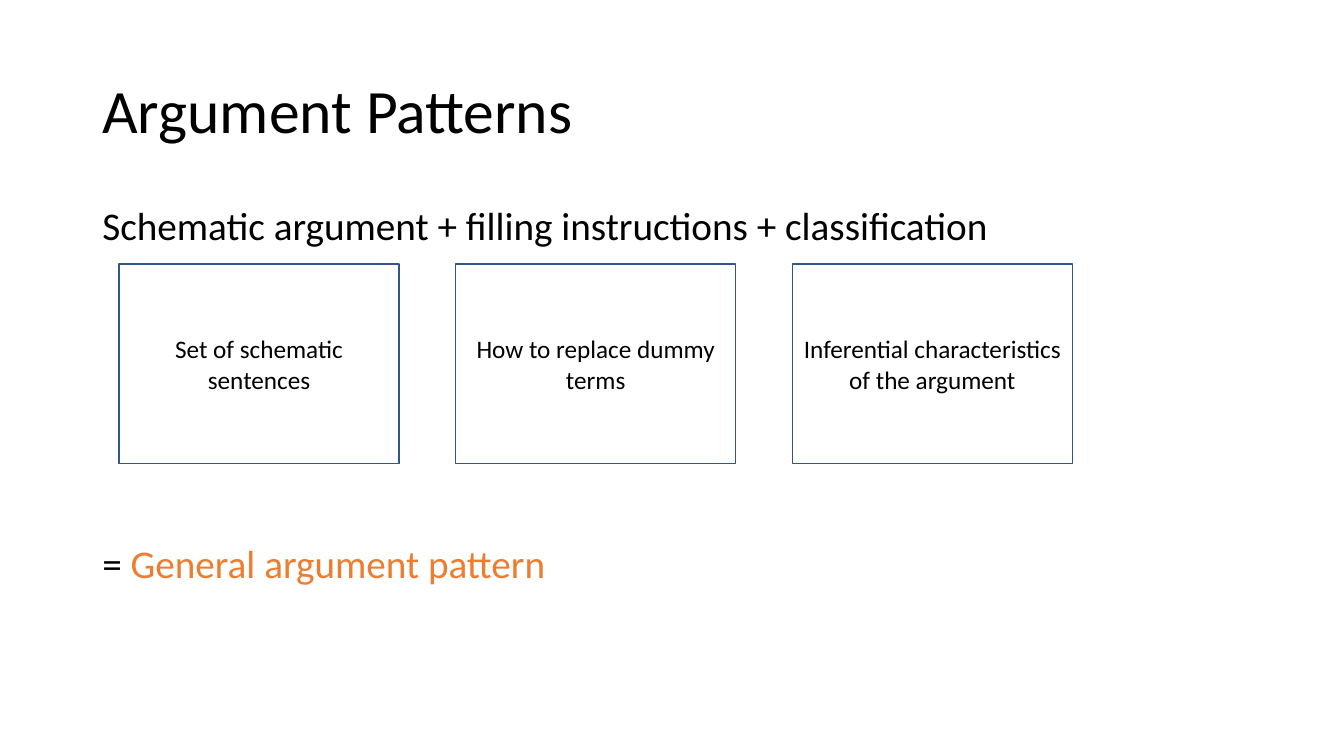
"""Build the Argument Patterns slide."""
from pptx import Presentation
from pptx.dml.color import RGBColor
from pptx.enum import shapes, text
from pptx.util import Pt

COLORS = {"text": "000000", "accent": "ED7D31", "border": "325491"}
FONT = "Calibri"
TITLE = "Argument Patterns"
FORMULA = "Schematic argument + filling instructions + classification"
RESULT = [("= ", "text"), ("General argument pattern", "accent")]
PARTS = [
    "Set of schematic sentences",
    "How to replace dummy terms",
    "Inferential characteristics of the argument",
]
LEFT, WIDTH = 66, 828
BOX_LEFT, BOX_TOP, BOX_W, BOX_H, BOX_STEP = 84.96, 188.64, 200.16, 142.56, 240.48


def write(p, runs, size=28, align=text.PP_ALIGN.LEFT, line=0.9, before=0):
    p.alignment = align
    p.line_spacing = line
    p.space_before = Pt(before)
    for words, color in runs:
        r = p.add_run()
        r.text = words
        r.font.name = FONT
        r.font.size = Pt(size)
        r.font.color.rgb = RGBColor.from_string(COLORS[color])


def frame(sp, anchor):
    tf = sp.text_frame
    tf.word_wrap = True
    tf.vertical_anchor = anchor
    return tf


def main():
    prs = Presentation()
    prs.slide_width, prs.slide_height = Pt(960), Pt(540)
    s = prs.slides.add_slide(prs.slide_layouts[6])

    sp = s.shapes.add_textbox(Pt(LEFT), Pt(144), Pt(WIDTH), Pt(342.72))
    tf = frame(sp, text.MSO_ANCHOR.TOP)
    write(tf.paragraphs[0], [(FORMULA, "text")])
    write(tf.add_paragraph(), RESULT, before=211)

    sp = s.shapes.add_textbox(Pt(LEFT), Pt(28.8), Pt(WIDTH), Pt(104.4))
    tf = frame(sp, text.MSO_ANCHOR.MIDDLE)
    write(tf.paragraphs[0], [(TITLE, "text")], size=44)

    for i, part in enumerate(PARTS):
        sp = s.shapes.add_shape(
            shapes.MSO_SHAPE.RECTANGLE,
            Pt(BOX_LEFT + i * BOX_STEP), Pt(BOX_TOP), Pt(BOX_W), Pt(BOX_H))
        sp.shadow.inherit = False
        sp.fill.background()
        sp.line.color.rgb = RGBColor.from_string(COLORS["border"])
        sp.line.width = Pt(1)
        tf = frame(sp, text.MSO_ANCHOR.MIDDLE)
        write(tf.paragraphs[0], [(part, "text")], size=18,
              align=text.PP_ALIGN.CENTER, line=1.0)

    prs.save("out.pptx")


if __name__ == "__main__":
    main()
